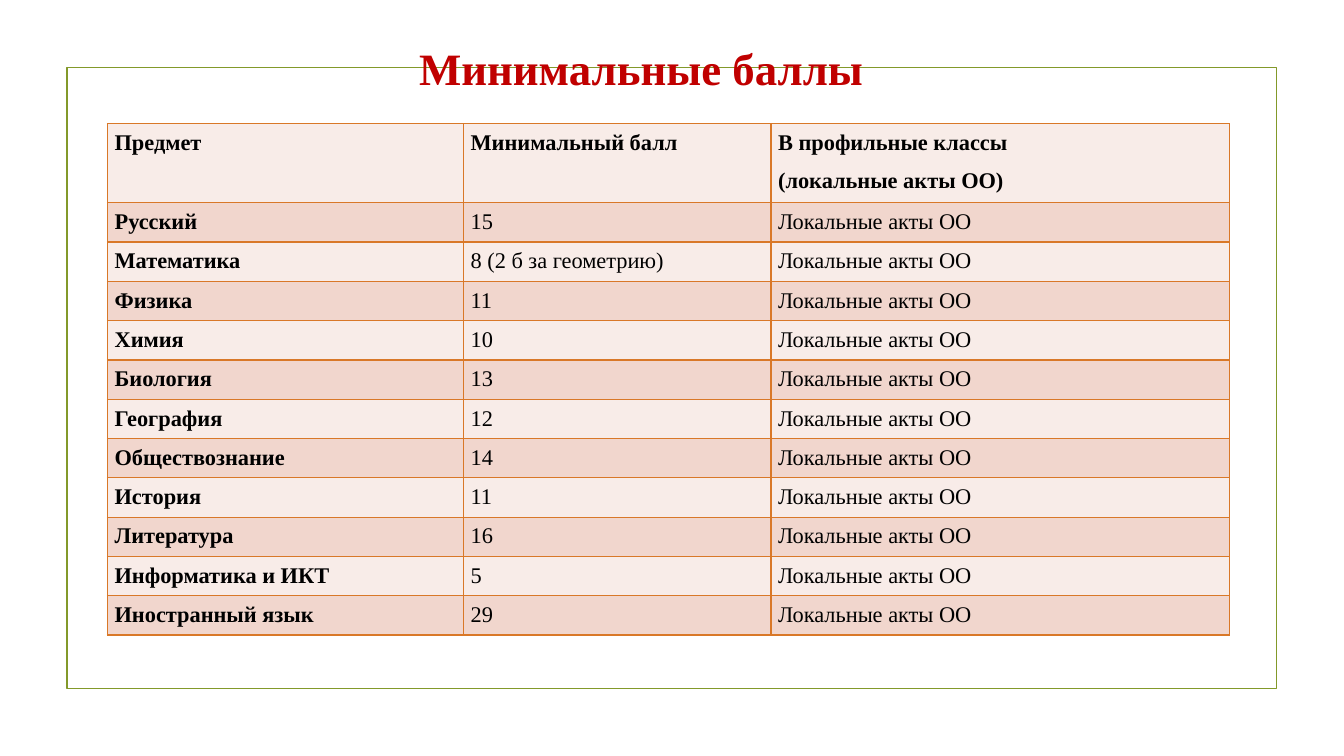
from lxml import etree
from pptx import Presentation
from pptx.dml.color import RGBColor
from pptx.enum import shapes, text
from pptx.oxml import ns
from pptx.util import Cm, Pt

TITLE = "Минимальные баллы"
HEADER = ("Предмет", "Минимальный балл", "В профильные классы\n(локальные акты ОО)")
SCORES = [
    ("Русский", "15"),
    ("Математика", "8 (2 б за геометрию)"),
    ("Физика", "11"),
    ("Химия", "10"),
    ("Биология", "13"),
    ("География", "12"),
    ("Обществознание", "14"),
    ("История", "11"),
    ("Литература", "16"),
    ("Информатика и ИКТ", "5"),
    ("Иностранный язык", "29"),
]
PROFILE = "Локальные акты ОО"

FONT = "Times New Roman"
BLACK = RGBColor(0x00, 0x00, 0x00)
RED = RGBColor(0xC0, 0x00, 0x00)
GREEN = RGBColor(0x83, 0x99, 0x2A)
ORANGE = RGBColor(0xD9, 0x78, 0x28)
BANDS = (RGBColor(0xF8, 0xEC, 0xE8), RGBColor(0xF1, 0xD6, 0xCD))

COLUMN_WIDTHS = (Cm(8.97), Cm(7.75), Cm(11.56))
HEADER_HEIGHT = Cm(1.99)
ROW_HEIGHT = Cm(0.99)


def write(frame, words, size, color=BLACK, bold=False, align=text.PP_ALIGN.LEFT,
          spacing=1.0, after=0):
    frame.word_wrap = True
    for number, line in enumerate(words.split("\n")):
        para = frame.paragraphs[0] if number == 0 else frame.add_paragraph()
        para.alignment = align
        para.line_spacing = spacing
        para.space_before = Pt(0)
        para.space_after = Pt(after)
        span = para.add_run()
        span.text = line
        span.font.name = FONT
        span.font.size = Pt(size)
        span.font.bold = bold
        span.font.color.rgb = color


def draw_borders(cell, color, width):
    properties = cell._tc.get_or_add_tcPr()
    for number, side in enumerate(("lnL", "lnR", "lnT", "lnB")):
        line = etree.Element(ns.qn("a:" + side), w=str(width))
        fill = etree.SubElement(line, ns.qn("a:solidFill"))
        etree.SubElement(fill, ns.qn("a:srgbClr"), val=str(color))
        properties.insert(number, line)


def add_frame(page):
    frame = page.shapes.add_shape(shapes.MSO_SHAPE.RECTANGLE,
                                  Cm(1.69), Cm(1.7), Cm(30.48), Cm(15.65))
    frame.shadow.inherit = False
    frame.fill.background()
    frame.line.color.rgb = GREEN
    frame.line.width = Pt(1.25)


def add_scores(page):
    rows = [HEADER] + [(subject, score, PROFILE) for subject, score in SCORES]
    table = page.shapes.add_table(
        len(rows), len(HEADER), Cm(2.71), Cm(3.12), sum(COLUMN_WIDTHS),
        HEADER_HEIGHT + ROW_HEIGHT * len(SCORES)).table
    table.first_row = False
    table.horz_banding = False
    for column, width in zip(table.columns, COLUMN_WIDTHS):
        column.width = width
    for r, row in enumerate(rows):
        table.rows[r].height = ROW_HEIGHT if r else HEADER_HEIGHT
        for c, words in enumerate(row):
            cell = table.cell(r, c)
            cell.margin_left = cell.margin_right = Cm(0.18)
            cell.margin_top = cell.margin_bottom = Cm(0.13)
            cell.fill.solid()
            cell.fill.fore_color.rgb = BANDS[r % 2]
            draw_borders(cell, ORANGE, Pt(0.96))
            write(cell.text_frame, words, 16, bold=r == 0 or c == 0,
                  spacing=1.07, after=8)


def add_title(page):
    title = page.shapes.title
    title.left, title.top, title.width, title.height = Cm(1.9), Cm(0.9), Cm(28.52), Cm(1.6)
    title.text_frame.auto_size = text.MSO_AUTO_SIZE.NONE
    title.text_frame.vertical_anchor = text.MSO_ANCHOR.MIDDLE
    write(title.text_frame, TITLE, 32, color=RED, bold=True, align=text.PP_ALIGN.CENTER)
    page.shapes.element.append(title.element)


def main():
    deck = Presentation()
    deck.slide_width, deck.slide_height = Cm(33.87), Cm(19.05)
    page = deck.slides.add_slide(deck.slide_layouts.get_by_name("Title Only"))
    add_frame(page)
    add_scores(page)
    add_title(page)
    deck.save("out.pptx")


if __name__ == "__main__":
    main()
